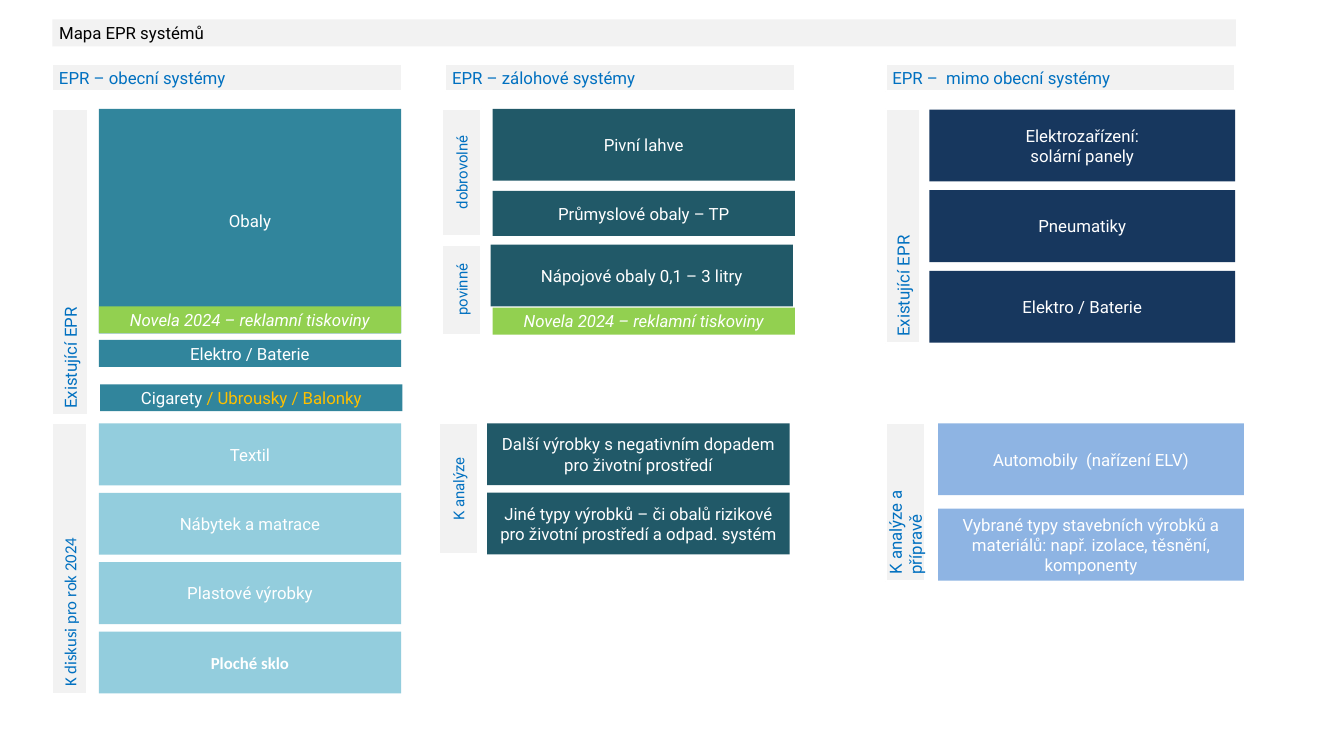
from pptx import Presentation
from pptx.dml.color import RGBColor
from pptx.enum.shapes import MSO_SHAPE
from pptx.enum.text import MSO_ANCHOR, MSO_AUTO_SIZE, PP_ALIGN
from pptx.util import Inches, Pt

COLORS = {
    "white": "FFFFFF", "black": "000000", "gray": "F2F2F2", "blue": "0070C0",
    "teal": "31859C", "sky": "93CDDD", "pine": "215968", "green": "92D050",
    "navy": "17375E", "pale": "8EB4E3", "gold": "FFC000",
}
HEAD_TOP = 0.96
NOW_TOP = 1.62
PLAN_TOP = 6.3
BAR = 0.4
NOVELA = "Novela 2024 – reklamní tiskoviny"


def color(name):
    return RGBColor.from_string(COLORS[name])


def write(shape, text, size=18, font="Roboto", ink="white", bold=False,
          italic=False, align=PP_ALIGN.CENTER, anchor=MSO_ANCHOR.MIDDLE,
          accent=""):
    """Write one paragraph per line; accent is a closing run in gold."""
    frame = shape.text_frame
    frame.word_wrap = True
    frame.auto_size = MSO_AUTO_SIZE.NONE
    frame.vertical_anchor = anchor
    for i, line in enumerate(text.split("\n")):
        para = frame.paragraphs[0] if i == 0 else frame.add_paragraph()
        para.alignment = align
        for words, tint in ((line, ink), (accent, "gold")):
            if words:
                run = para.add_run()
                run.text = words
                run.font.size, run.font.name = Pt(size), font
                run.font.bold, run.font.italic = bold, italic
                run.font.color.rgb = color(tint)


def block(slide, box, fill, text, line=None, **style):
    shape = slide.shapes.add_shape(MSO_SHAPE.RECTANGLE, *map(Inches, box))
    shape.shadow.inherit = False
    shape.fill.solid()
    shape.fill.fore_color.rgb = color(fill)
    if line:
        shape.line.color.rgb = color(line)
        shape.line.width = Pt(2)
    else:
        shape.line.fill.background()
    write(shape, text, **style)
    return shape


def stack(slide, box, fill, items, gap):
    """Share the height of the box equally among the items."""
    left, top, width, height = box
    each = (height - gap * (len(items) - 1)) / len(items)
    for i, (text, style) in enumerate(items):
        block(slide, (left, top + i * (each + gap), width, each), fill, text, **style)


def head(slide, left, text):
    block(slide, (left, HEAD_TOP, 5.2, BAR), "gray", text, line="white",
          ink="blue", align=PP_ALIGN.LEFT)


def side(slide, box, text, align=PP_ALIGN.LEFT, **style):
    """Label that reads upwards."""
    shape = block(slide, box, "gray", text, line="white", ink="blue",
                  align=align, **style)
    shape.text_frame._txBody.bodyPr.set("vert", "vert270")


def banner(slide, box, text):
    title = slide.shapes.title
    title.left, title.top, title.width, title.height = map(Inches, box)
    title.fill.solid()
    title.fill.fore_color.rgb = color("gray")
    write(title, text, ink="black", align=PP_ALIGN.LEFT, anchor=MSO_ANCHOR.TOP)


def towns(slide, left):
    head(slide, left, "EPR – obecní systémy")
    x, width = left + 0.69, 4.5
    # Existing systems
    side(slide, (left, NOW_TOP, 0.53, 4.56), "Existující EPR")
    block(slide, (x, NOW_TOP, width, 3.34), "teal", "Obaly")
    block(slide, (x, 4.56, width, BAR), "green", NOVELA, italic=True)
    block(slide, (x, 5.06, width, BAR), "teal", "Elektro / Baterie")
    block(slide, (x + 0.02, 5.72, width, BAR), "teal", "Cigarety ",
          accent="/ Ubrousky / Balonky")
    # Under discussion
    side(slide, (left, PLAN_TOP, 0.51, 4.02), "K diskusi pro rok 2024",
         font="Calibri")
    stack(slide, (x, PLAN_TOP, width, 4.02), "sky", [
        ("Textil", {}), ("Nábytek a matrace", {}), ("Plastové výrobky", {}),
        ("Ploché sklo", {"font": "Calibri", "bold": True}),
    ], 0.11)


def deposits(slide, left):
    head(slide, left + 0.05, "EPR – zálohové systémy")
    x, width = left + 0.75, 4.5
    small = {"size": 16, "align": PP_ALIGN.CENTER}
    # Voluntary
    side(slide, (left, NOW_TOP, 0.58, 1.89), "dobrovolné", **small)
    block(slide, (x, NOW_TOP, width, 1.07), "pine", "Pivní lahve")
    block(slide, (x, 2.84, width, 0.67), "pine", "Průmyslové obaly – TP")
    # Mandatory
    side(slide, (left, 3.64, 0.58, 1.34), "povinné", **small)
    block(slide, (x - 0.03, 3.64, width, 0.92), "pine",
          "Nápojové obaly 0,1 – 3 litry")
    block(slide, (x, 4.58, width, BAR), "green", NOVELA, italic=True)
    # To be analysed
    side(slide, (left - 0.05, PLAN_TOP, 0.58, 1.95), "K analýze", **small)
    stack(slide, (x - 0.08, PLAN_TOP, width, 1.95), "pine", [
        ("Další výrobky s negativním dopadem pro životní prostředí", {}),
        ("Jiné typy výrobků – či obalů rizikové pro životní prostředí "
         "a odpad. systém", {}),
    ], 0.11)


def others(slide, left):
    head(slide, left, "EPR –  mimo obecní systémy")
    width = 4.55
    # Existing systems
    side(slide, (left, NOW_TOP, 0.51, 3.49), "Existující EPR")
    stack(slide, (left + 0.65, 1.63, width, 3.47), "navy", [
        ("Elektrozařízení:\nsolární panely", {}), ("Pneumatiky", {}),
        ("Elektro / Baterie", {}),
    ], 0.13)
    # To be analysed and prepared
    side(slide, (left, PLAN_TOP, 0.58, 2.35), "K analýze a přípravě")
    stack(slide, (left + 0.78, PLAN_TOP, width, 2.34), "pale", [
        ("Automobily  (nařízení ELV)", {}),
        ("Vybrané typy stavebních výrobků a materiálů: např. izolace, "
         "těsnění, komponenty", {}),
    ], 0.2)


def main():
    deck = Presentation()
    deck.slide_width, deck.slide_height = Inches(20), Inches(11.25)
    slide = deck.slides.add_slide(deck.slide_layouts[5])
    banner(slide, (0.78, 0.29, 17.61, BAR), "Mapa EPR systémů")
    towns(slide, 0.78)
    deposits(slide, 6.58)
    others(slide, 13.18)
    deck.save("out.pptx")


if __name__ == "__main__":
    main()
